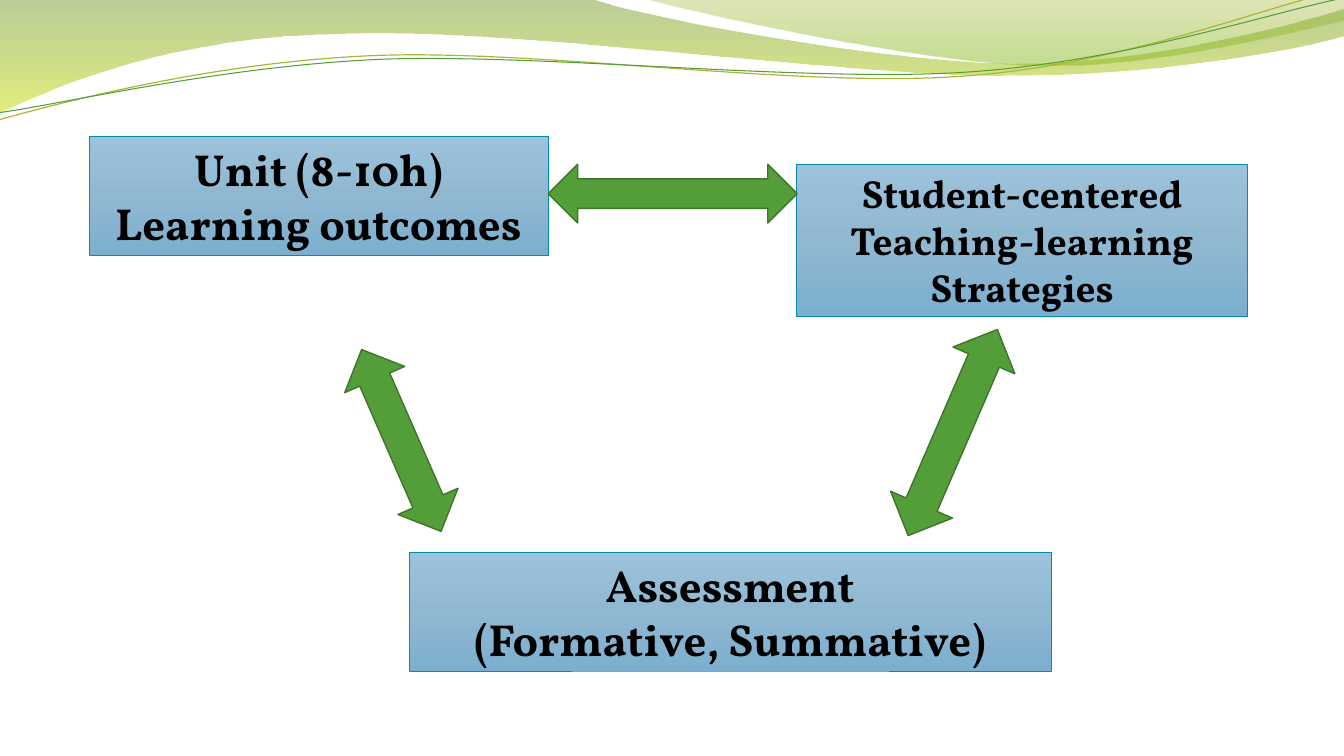
from lxml import etree
from pptx import Presentation
from pptx.dml.color import RGBColor
from pptx.enum.shapes import MSO_SHAPE
from pptx.enum.text import MSO_ANCHOR, MSO_AUTO_SIZE, PP_ALIGN
from pptx.oxml.ns import qn
from pptx.util import Cm, Pt

RECTANGLE = MSO_SHAPE.RECTANGLE
LEFT_RIGHT = MSO_SHAPE.LEFT_RIGHT_ARROW
UP_DOWN = MSO_SHAPE.UP_DOWN_ARROW
CENTER = PP_ALIGN.CENTER
MIDDLE = MSO_ANCHOR.MIDDLE
GROW = MSO_AUTO_SIZE.SHAPE_TO_FIT_TEXT


def color(value):
    return RGBColor.from_string(value)


def fill_gradient(shape, stops):
    shape.fill.gradient()
    shape.fill.gradient_angle = 270
    stop_list = shape._element.spPr.find(qn("a:gradFill")).find(qn("a:gsLst"))
    for stop in list(stop_list):
        stop_list.remove(stop)
    for position, value, opacity in stops:
        stop = etree.SubElement(stop_list, qn("a:gs"), pos=str(position * 1000))
        tint = etree.SubElement(stop, qn("a:srgbClr"), val=value)
        if opacity < 100:
            etree.SubElement(tint, qn("a:alpha"), val=str(opacity * 1000))


deck = Presentation()
deck.slide_width = Cm(33.87)
deck.slide_height = Cm(19.05)
page = deck.slides.add_slide(deck.slide_layouts[6])

waves = [
    ((0, 0),
     [[(14.91, -0.03)],
      [(16.1, 0.43), (22.45, 1.6), (25.68, 1.6)],
      [(28.88, 1.6), (32.44, 0.66), (33.86, 0.23)],
      [(33.88, 0.91)],
      [(33.3, 1.12), (29.44, 1.93), (25.25, 1.91)],
      [(21.06, 1.91), (12.93, 0.71), (8.71, 0.86)],
      [(4.37, 0.91), (1.55, 2.11), (-0.05, 2.87)],
      [(0, 0)]],
     [(0, "69921C", 45), (100, "CCE10F", 55)], None, 0),
    ((16.21, -0.03),
     [[(17.25, 0.28), (23.09, 1.57), (26.04, 1.65)],
      [(28.96, 1.75), (32.56, 0.81), (33.86, 0.53)],
      [(33.86, 0)],
      [(16.21, -0.03)]],
     [(0, "9BAA1A", 30), (80, "81BA16", 45)], None, 0),
    ((-0.08, 2.22),
     [[(1.57, 1.85), (5.34, 1.03), (9.38, 1.05)],
      [(13.4, 1.06), (20, 2.36), (24.07, 2.27)],
      [(28.17, 2.21), (31.82, 0.9), (33.84, 0.55)]],
     None, ("A9B733", 0.85), 357.3),
    ((-0.07, 2.04),
     [[(1.54, 1.9), (5.54, 1.14), (9.59, 1.15)],
      [(13.65, 1.19), (20.19, 2.23), (24.24, 2.17)],
      [(28.28, 2.11), (31.92, 1.06), (33.91, 0.75)]],
     None, ("549E39", 0.75), 357.3),
]
for start, segments, stops, stroke, angle in waves:
    points = [(Cm(x), Cm(y)) for segment in segments for x, y in segment]
    builder = page.shapes.build_freeform(Cm(start[0]), Cm(start[1]))
    builder.add_line_segments(points, close=stops is not None)
    wave = builder.convert_to_shape()
    lines = list(wave._element.iter(qn("a:lnTo")))
    for segment in segments:
        parts, lines = lines[:len(segment)], lines[len(segment):]
        if len(parts) == 3:
            curve = etree.Element(qn("a:cubicBezTo"))
            parts[0].addprevious(curve)
            for part in parts:
                curve.append(part[0])
                part.getparent().remove(part)
    wave.rotation = angle
    wave.shadow.inherit = False
    if stops:
        fill_gradient(wave, stops)
        wave.line.fill.background()
    else:
        wave.fill.background()
        wave.line.color.rgb = color(stroke[0])
        wave.line.width = Pt(stroke[1])

boxes = [
    (2.25, 3.43, 11.56, 3, 32, ["Unit (8-10h)", "Learning outcomes"]),
    (20.07, 4.13, 11.37, 3.85, 28, ["Student-centered Teaching-learning Strategies"]),
    (10.31, 13.91, 16.18, 3, 32, ["Assessment", "(Formative, Summative)"]),
]
for left, top, width, height, size, lines in boxes:
    box = page.shapes.add_shape(RECTANGLE, Cm(left), Cm(top), Cm(width), Cm(height))
    box.shadow.inherit = False
    fill_gradient(box, [(0, "9DC3DC", 100), (50, "90B8D1", 100), (100, "7CAFCF", 100)])
    box.line.color.rgb = color("0989B1")
    box.line.width = Pt(0.5)
    frame = box.text_frame
    frame.word_wrap = True
    frame.auto_size = GROW
    frame.vertical_anchor = MIDDLE
    for index, line in enumerate(lines):
        para = frame.add_paragraph() if index else frame.paragraphs[0]
        para.alignment = CENTER
        span = para.add_run()
        span.text = line
        span.font.name = "Vollkorn"
        span.font.size = Pt(size)
        span.font.bold = True
        span.font.color.rgb = color("000000")

arrows = [
    (LEFT_RIGHT, 13.82, 4.14, 6.27, 1.48, 0),
    (UP_DOWN, 9.29, 8.6, 1.65, 5, 336.4),
    (UP_DOWN, 23.16, 8.07, 1.7, 5.66, 23.4),
]
for kind, left, top, width, height, angle in arrows:
    arrow = page.shapes.add_shape(kind, Cm(left), Cm(top), Cm(width), Cm(height))
    arrow.rotation = angle
    arrow.shadow.inherit = False
    arrow.fill.solid()
    arrow.fill.fore_color.rgb = color("549E39")
    arrow.line.color.rgb = color("3E752A")
    arrow.line.width = Pt(1)

deck.save("out.pptx")
